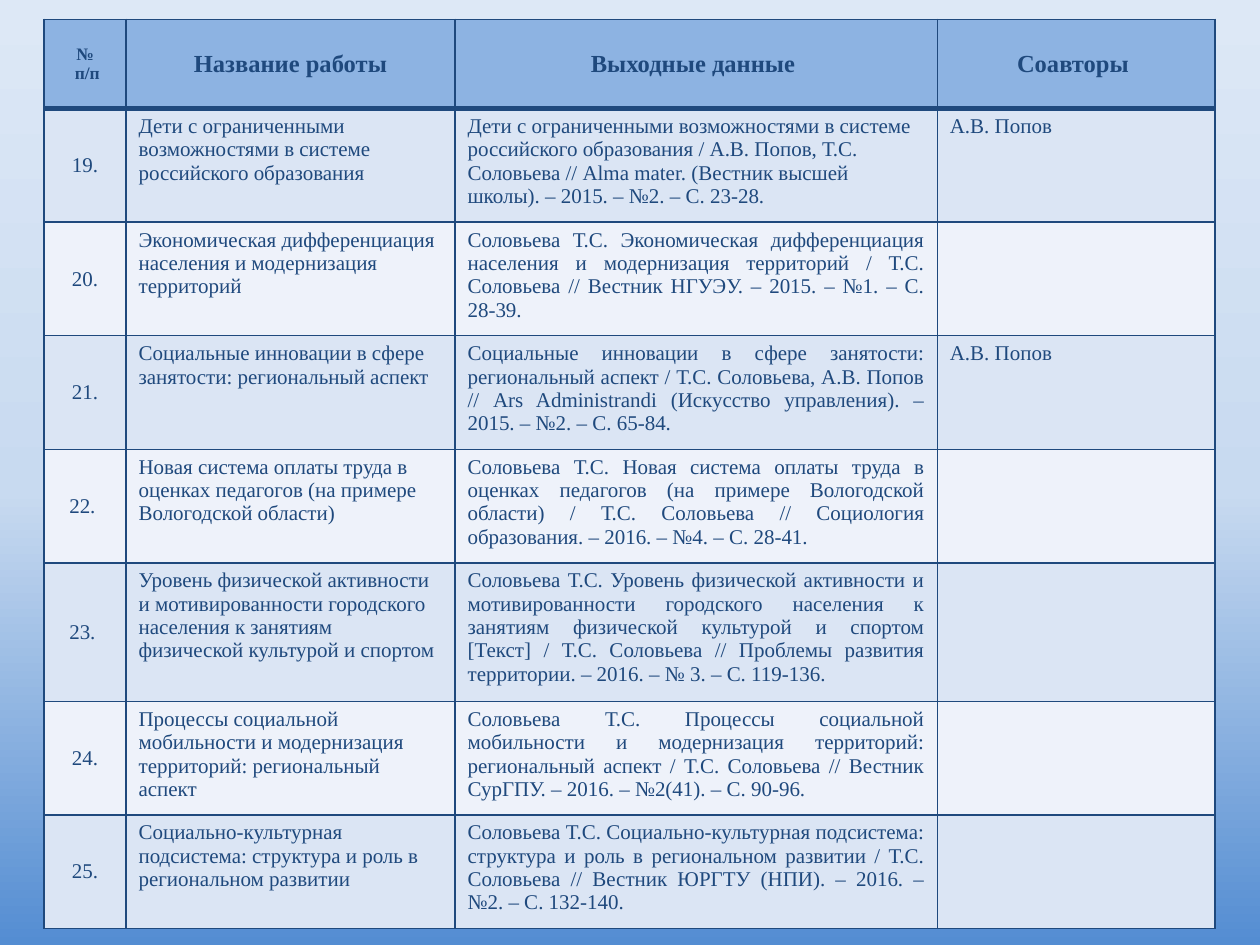
from copy import deepcopy

from lxml import etree
from pptx import Presentation
from pptx import util as u
from pptx.dml import color
from pptx.enum import text
from pptx.oxml.ns import qn

FONT = "Times New Roman"
INK = "1F497D"
HEAD_FILL = "8DB3E2"
BAND_FILLS = ("DBE5F4", "EEF2FA")
BACKGROUND = ((0, "548DD2"), (0.48, "C8DAF0"), (1, "DDE8F6"))
COL_WIDTHS = (46.8, 188, 275.6, 158.6)
HEAD_HEIGHT, ROW_HEIGHT, TALL_HEIGHT = 51.1, 64.9, 79.2
TALL_NUMBER = "23. "

HEADINGS = ("№\n п/п", "Название работы", "Выходные данные ", "Соавторы ")
WORKS = (
    ("19.",
     "Дети с ограниченными возможностями в системе российского образования",
     "Дети с ограниченными возможностями в системе российского образования / А.В. Попов, "
     "Т.С. Соловьева // Alma mater. (Вестник высшей школы). – 2015. – №2. – С. 23-28.",
     "А.В. Попов"),
    ("20.",
     "Экономическая дифференциация населения и модернизация территорий",
     "Соловьева Т.С. Экономическая дифференциация населения и модернизация территорий / "
     "Т.С. Соловьева // Вестник НГУЭУ. – 2015. – №1. – С. 28-39.",
     ""),
    ("21.",
     "Социальные инновации в сфере занятости: региональный аспект",
     "Социальные инновации в сфере занятости: региональный аспект / Т.С. Соловьева, "
     "А.В. Попов // Ars Administrandi (Искусство управления). – 2015. – №2. – С. 65-84.",
     "А.В. Попов"),
    ("22. ",
     "Новая система оплаты труда в оценках педагогов (на примере Вологодской области)",
     "Cоловьева Т.С. Новая система оплаты труда в оценках педагогов (на примере "
     "Вологодской области) / Т.С. Соловьева // Социология образования. – 2016. – №4. – "
     "С. 28-41.",
     ""),
    ("23. ",
     "Уровень физической активности и мотивированности городского населения к занятиям "
     "физической культурой и спортом",
     "Соловьева Т.С. Уровень физической активности и мотивированности городского населения "
     "к занятиям физической культурой и спортом [Текст] / Т.С. Соловьева // Проблемы "
     "развития территории. – 2016. – № 3. – C. 119-136.",
     ""),
    ("24.",
     "Процессы социальной мобильности и модернизация территорий: региональный аспект",
     "Соловьева Т.С. Процессы социальной мобильности и модернизация территорий: "
     "региональный аспект / Т.С. Соловьева // Вестник СурГПУ. – 2016. – №2(41). – С. 90-96.",
     ""),
    ("25.",
     "Социально-культурная подсистема: структура и роль в региональном развитии",
     "Соловьева Т.С. Социально-культурная подсистема: структура и роль в региональном "
     "развитии / Т.С. Соловьева // Вестник ЮРГТУ (НПИ). – 2016. – №2. – С. 132-140.",
     ""),
)


def rgb(value):
    """Turn a hex string into a colour."""
    return color.RGBColor.from_string(value)


def set_background(s):
    """Fill the slide with a gradient that rises from the bottom edge."""
    fill = s.background.fill
    fill.gradient()
    fill.gradient_angle = 90
    stops = s._element.find(".//" + qn("a:gsLst"))
    stops.append(deepcopy(stops[-1]))
    for stop, (position, value) in zip(fill.gradient_stops, BACKGROUND):
        stop.position = position
        stop.color.rgb = rgb(value)


def set_borders(cell, top=1, bottom=1):
    """Draw the four borders of a cell, with widths in points."""
    tc_pr = cell._tc.get_or_add_tcPr()
    for i, (side, width) in enumerate((("L", 1), ("R", 1), ("T", top), ("B", bottom))):
        ln = etree.Element(qn("a:ln" + side), w=str(u.Pt(width)))
        solid = etree.SubElement(ln, qn("a:solidFill"))
        etree.SubElement(solid, qn("a:srgbClr"), val=INK)
        tc_pr.insert(i, ln)


def fill_cell(cell, words, fill, size=12, bold=False, align=None, middle=False):
    """Set the text, the fill and the text format of a cell."""
    cell.fill.solid()
    cell.fill.fore_color.rgb = rgb(fill)
    if middle:
        cell.vertical_anchor = text.MSO_ANCHOR.MIDDLE
    cell.text_frame.text = words
    for p in cell.text_frame.paragraphs:
        p.alignment = align
        for r in p.runs:
            r.font.name = FONT
            r.font.size = u.Pt(size)
            r.font.bold = bold
            r.font.color.rgb = rgb(INK)


def add_works_table(s):
    """Add the table of published works."""
    center, justify = text.PP_ALIGN.CENTER, text.PP_ALIGN.JUSTIFY
    heights = [HEAD_HEIGHT] + [TALL_HEIGHT if w[0] == TALL_NUMBER else ROW_HEIGHT for w in WORKS]
    frame = s.shapes.add_table(len(heights), len(COL_WIDTHS), u.Pt(25.2), u.Pt(11),
                               u.Pt(sum(COL_WIDTHS)), u.Pt(sum(heights)))
    table = frame.table
    for column, width in zip(table.columns, COL_WIDTHS):
        column.width = u.Pt(width)
    for row, height in zip(table.rows, heights):
        row.height = u.Pt(height)
    for c, heading in enumerate(HEADINGS):
        cell = table.cell(0, c)
        fill_cell(cell, heading, HEAD_FILL, 14 if c else 10, True, center, True)
        set_borders(cell, bottom=3)
    for i, work in enumerate(WORKS):
        aligns = (center, None, justify if i else None, None)
        for c, (words, align) in enumerate(zip(work, aligns)):
            cell = table.cell(i + 1, c)
            fill_cell(cell, words, BAND_FILLS[i % 2], align=align, middle=c == 0)
            set_borders(cell, top=1 if i else 3)


def main():
    """Build the slide and save it."""
    prs = Presentation()
    prs.slide_width, prs.slide_height = u.Pt(720), u.Pt(540)
    s = prs.slides.add_slide(prs.slide_layouts[6])
    set_background(s)
    add_works_table(s)
    prs.save("out.pptx")


if __name__ == "__main__":
    main()
